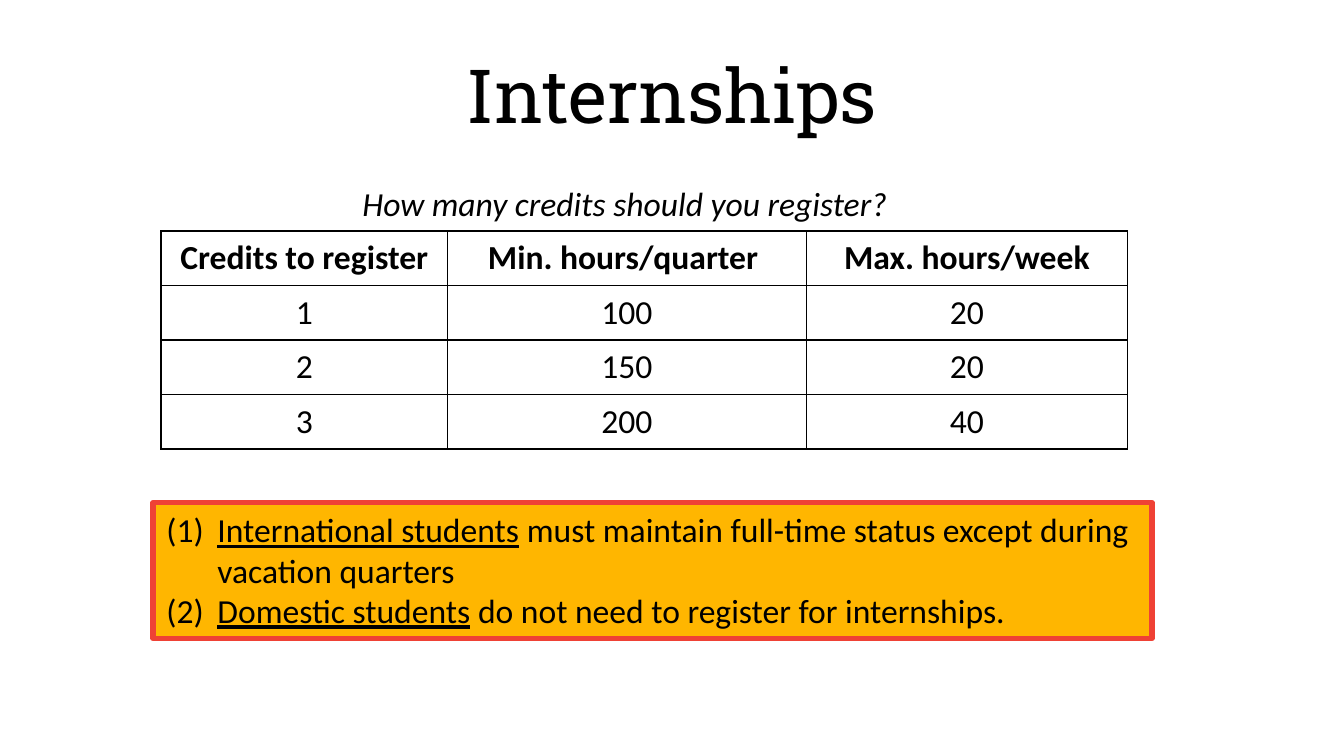
"""Build the slide on internship credits."""
from lxml.etree import SubElement
from pptx import Presentation
from pptx.dml.color import RGBColor
from pptx.enum.shapes import MSO_SHAPE
from pptx.enum.text import MSO_ANCHOR, PP_ALIGN
from pptx.oxml.ns import qn
from pptx.util import Inches, Pt

BLACK = RGBColor(0, 0, 0)
AMBER = RGBColor(0xFF, 0xB6, 0x00)
RED = RGBColor(0xEF, 0x41, 0x35)

TITLE = "Internships"
PROMPT = "How many credits should you register?"
ROWS = [
    ("Credits to register", "Min. hours/quarter ", "Max. hours/week"),
    ("1", "100", "20"),
    ("2", "150", "20"),
    ("3", "200", "40"),
]
WIDTHS = [2.13, 2.67, 2.39]
HEIGHT = 0.4
NOTES = [
    ("International students", " must maintain full-time status except during vacation quarters"),
    ("Domestic students", " do not need to register for internships."),
]


def style(font, size=18, name="Calibri"):
    font.size = Pt(size)
    font.name = name
    font.color.rgb = BLACK


def set_line(frame, text, size=18, name="Calibri"):
    frame.text = text
    para = frame.paragraphs[0]
    para.alignment = PP_ALIGN.CENTER
    font = para.runs[0].font
    style(font, size, name)
    return font


def add_border(cell):
    props = cell._tc.get_or_add_tcPr()
    for index, side in enumerate(("lnL", "lnR", "lnT", "lnB")):
        line = props.makeelement(qn(f"a:{side}"), {"w": str(Pt(1))})
        fill = SubElement(line, qn("a:solidFill"))
        SubElement(fill, qn("a:srgbClr"), val=str(BLACK))
        props.insert(index, line)


def add_grid(slide):
    size = Inches(sum(WIDTHS)), Inches(HEIGHT * len(ROWS))
    frame = slide.shapes.add_table(len(ROWS), len(WIDTHS), Inches(1.2), Inches(1.72), *size)
    table = frame.table
    table.first_row = table.horz_banding = False
    for column, width in zip(table.columns, WIDTHS):
        column.width = Inches(width)
    for r, row in enumerate(ROWS):
        table.rows[r].height = Inches(HEIGHT)
        for c, text in enumerate(row):
            cell = table.cell(r, c)
            cell.fill.background()
            add_border(cell)
            set_line(cell.text_frame, text).bold = r == 0


def add_notes(slide):
    box = slide.shapes.add_shape(
        MSO_SHAPE.RECTANGLE, Inches(1.14), Inches(3.74), Inches(7.43), Inches(1.01))
    box.shadow.inherit = False
    box.fill.solid()
    box.fill.fore_color.rgb = AMBER
    box.line.color.rgb = RED
    box.line.width = Pt(3)
    frame = box.text_frame
    frame.word_wrap = True
    frame.vertical_anchor = MSO_ANCHOR.TOP
    for index, parts in enumerate(NOTES):
        para = frame.add_paragraph() if index else frame.paragraphs[0]
        props = para._p.get_or_add_pPr()
        props.set("marL", str(Inches(0.38)))
        props.set("indent", str(Inches(-0.38)))
        SubElement(props, qn("a:buFont"), typeface="Calibri")
        SubElement(props, qn("a:buAutoNum"), type="arabicParenBoth")
        para.alignment = PP_ALIGN.LEFT
        for part, text in enumerate(parts):
            run = para.add_run()
            run.text = text
            style(run.font)
            run.font.underline = part == 0


def main():
    deck = Presentation()
    deck.slide_width = Inches(10)
    deck.slide_height = deck.slide_width * 9 // 16
    slide = deck.slides.add_slide(deck.slide_layouts[5])
    title = slide.shapes.title
    title.left, title.top = Inches(0.5), Inches(0.23)
    title.width, title.height = Inches(9), Inches(0.94)
    title.text_frame.vertical_anchor = MSO_ANCHOR.MIDDLE
    set_line(title.text_frame, TITLE, 40, "Roboto Slab")
    add_notes(slide)
    add_grid(slide)
    prompt = slide.shapes.add_textbox(Inches(2.55), Inches(1.31), Inches(4.2), Inches(0.4))
    set_line(prompt.text_frame, PROMPT).italic = True
    deck.save("out.pptx")


if __name__ == "__main__":
    main()
